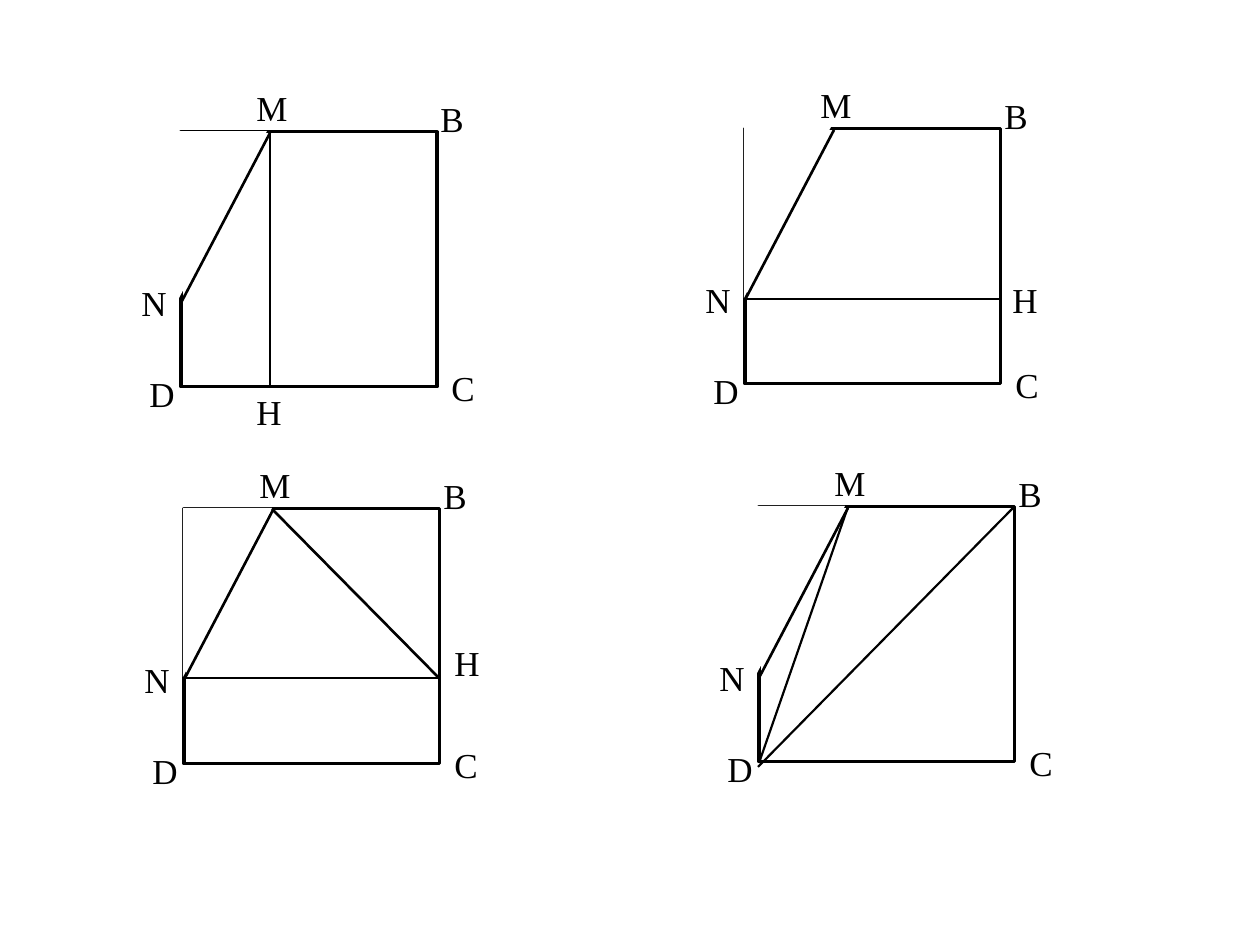
from lxml.etree import SubElement
from pptx import Presentation
from pptx.dml.color import RGBColor
from pptx.enum.shapes import MSO_CONNECTOR as Connector, MSO_SHAPE as Shape
from pptx.enum.text import MSO_AUTO_SIZE as AutoSize
from pptx.oxml.ns import qn
from pptx.util import Emu, Pt

SCALE = 914400 / 126
SIDE_W, SIDE_H = 256, 255
LABEL_W, LABEL_H = 74, 55
INK, PAPER = "000000", "FFFFFF"
CORNERS = {"B": (247, -41), "C": (258, 228), "D": (-44, 234),
           "M": (63, -52), "N": (-52, 143)}
SLANT = (89, 1, 1, 169)

FIGURES = [
    {"origin": (181, 132), "cuts": [(89, 0, 89, 255)], "weight": 1.5,
     "h_label": (63, 252), "corner": (-3, -1, 89, 169)},
    {"origin": (745, 129), "cuts": [(0, 170, 255, 170)], "weight": 1.5,
     "h_label": (255, 143), "corner": (-1, -6, 89, 175)},
    {"origin": (184, 509), "cuts": [(2, 169, 257, 169), (89, 1, 256, 170)],
     "weight": 1.5, "h_label": (258, 126), "corner": (-1, -1, 89, 169)},
    {"origin": (759, 507), "cuts": [(255, 0, -1, 260), (89, 0, 0, 256)],
     "weight": 1.25, "h_label": None, "corner": (-3, -1, 89, 169)},
]


def px(length):
    """Turn px into EMU."""
    return Emu(round(length * SCALE))


def color(hex_code):
    """Turn a hex string into a colour."""
    return RGBColor.from_string(hex_code)


def add_filled(slide, kind, left, top, width, height):
    """Add a paper-coloured shape without shadow."""
    shape = slide.shapes.add_shape(kind, px(left), px(top), px(width), px(height))
    shape.shadow.inherit = False
    shape.fill.solid()
    shape.fill.fore_color.rgb = color(PAPER)
    return shape


def add_segment(slide, x, y, ends, weight):
    """Draw a straight line between two points relative to (x, y)."""
    x1, y1, x2, y2 = ends
    segment = slide.shapes.add_connector(
        Connector.STRAIGHT, px(x + x1), px(y + y1), px(x + x2), px(y + y2))
    segment.line.color.rgb = color(INK)
    segment.line.width = Pt(weight)
    SubElement(segment._element.spPr, qn("a:effectLst"))


def add_label(slide, left, top, letter):
    """Write the letter of a point."""
    label = slide.shapes.add_textbox(px(left), px(top), px(LABEL_W), px(LABEL_H))
    frame = label.text_frame
    frame.word_wrap = True
    frame.auto_size = AutoSize.SHAPE_TO_FIT_TEXT
    paragraph = frame.paragraphs[0]
    paragraph.text = letter
    paragraph.font.name = "Times New Roman"
    paragraph.font.size = Pt(20)
    paragraph.font.color.rgb = color(INK)


def add_figure(slide, origin, cuts, weight, h_label, corner):
    """Draw a square with corner MN cut off and its dividing lines."""
    x, y = origin
    square = add_filled(slide, Shape.RECTANGLE, x, y, SIDE_W, SIDE_H)
    square.line.color.rgb = color(INK)
    square.line.width = Pt(1.75)
    add_segment(slide, x, y, SLANT, 1.5)
    for cut in cuts:
        add_segment(slide, x, y, cut, weight)
    points = {**CORNERS, "H": h_label} if h_label else CORNERS
    for letter, (dx, dy) in points.items():
        add_label(slide, x + dx, y + dy, letter)
    dx, dy, width, height = corner
    cut_off = add_filled(slide, Shape.RIGHT_TRIANGLE, x + dx, y + dy, width, height)
    cut_off.line.fill.background()
    cut_off.rotation = 180
    cut_off._element.spPr.find(qn("a:xfrm")).set("flipH", "1")


def main():
    """Build the slide with four ways to divide the pentagon."""
    presentation = Presentation()
    presentation.slide_width, presentation.slide_height = px(1260), px(945)
    slide = presentation.slides.add_slide(presentation.slide_layouts[6])
    for figure in FIGURES:
        add_figure(slide, **figure)
    presentation.save("out.pptx")


if __name__ == "__main__":
    main()
